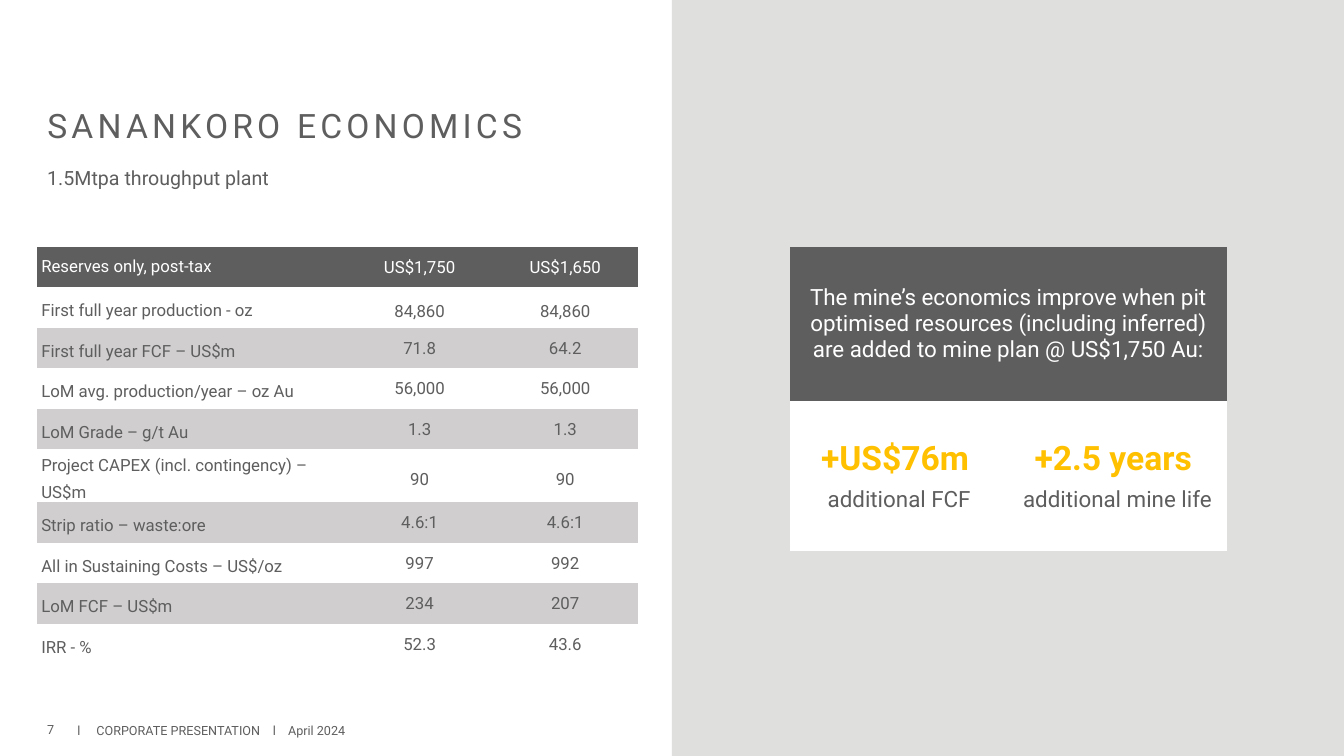
"""Builds the Sanankoro economics slide."""
from pptx import Presentation
from pptx.dml.color import RGBColor
from pptx.enum.shapes import MSO_SHAPE
from pptx.enum.text import MSO_ANCHOR, MSO_AUTO_SIZE, PP_ALIGN
from pptx.oxml.ns import qn
from pptx.util import Cm, Pt
from lxml.etree import SubElement

FONT = "Roboto"
GREY, PANEL, BAND, GOLD, WHITE = "5E5E5E", "DFDFDE", "D0CECE", "FFC000", "FFFFFF"
NO_STYLE = "{2D5ABB26-0587-4C30-8999-92F81FD0307C}"

TITLE = "SANANKORO ECONOMICS"
SUBTITLE = "1.5Mtpa throughput plant"
PAGE = "7"
FOOTER = "l\tCORPORATE PRESENTATION\tl\tApril 2024"
FOOTER_TABS = (0.48, 4.93, 5.31)
ECONOMICS = [
    ("Reserves only, post-tax", "US$1,750", "US$1,650"),
    ("First full year production - oz", "84,860", "84,860"),
    ("First full year FCF – US$m", "71.8", "64.2"),
    ("LoM avg. production/year – oz Au", "56,000", "56,000"),
    ("LoM Grade – g/t Au", "1.3", "1.3"),
    ("Project CAPEX (incl. contingency) – US$m", "90", "90"),
    ("Strip ratio – waste:ore", "4.6:1", "4.6:1"),
    ("All in Sustaining Costs – US$/oz", "997", "992"),
    ("LoM FCF – US$m", "234", "207"),
    ("IRR - %", "52.3", "43.6"),
]
SPACED_VALUE_ROWS = (1, 5)
UPSIDE = ("The mine’s economics improve when pit optimised resources "
          "(including inferred) are added to mine plan @ US$1,750 Au:")
GAINS = [("+US$76m ", "additional FCF"), ("+2.5 years ", "additional mine life")]

LEFT, TABLE_TOP = 0.94, 6.22
COL_WIDTHS, ROW_HEIGHT = (7.8, 3.67, 3.67), 1.02
UPSIDE_LEFT, UPSIDE_WIDTHS, UPSIDE_HEIGHTS = 19.91, (5.5, 5.5), (3.88, 3.78)


def rgb(value):
    return RGBColor.from_string(value)


def style(p, size, color=GREY, bold=False, align=PP_ALIGN.LEFT):
    p.alignment = align
    for r in p.runs:
        r.font.name = FONT
        r.font.size = Pt(size)
        r.font.bold = bold
        r.font.color.rgb = rgb(color)


def place(s, text, box, size):
    s.left, s.top, s.width, s.height = (Cm(v) for v in box)
    tf = s.text_frame
    tf.word_wrap = True
    tf.auto_size = MSO_AUTO_SIZE.NONE
    tf.vertical_anchor = MSO_ANCHOR.MIDDLE
    tf.text = text
    p = tf.paragraphs[0]
    style(p, size)
    return p


def add_text(slide, text, box, size):
    return place(slide.shapes.add_textbox(0, 0, 0, 0), text, box, size)


def add_grid(slide, left, widths, heights):
    size = [Cm(v) for v in (left, TABLE_TOP, sum(widths), sum(heights))]
    s = slide.shapes.add_table(len(heights), len(widths), *size)
    s.element.xpath(".//a:tableStyleId")[0].text = NO_STYLE
    table = s.table
    table.first_row = table.horz_banding = False
    for column, width in zip(table.columns, widths):
        column.width = Cm(width)
    for row, height in zip(table.rows, heights):
        row.height = Cm(height)
    return table


def fill_cell(cell, lines, fill=None):
    cell.vertical_anchor = MSO_ANCHOR.MIDDLE
    if fill:
        cell.fill.solid()
        cell.fill.fore_color.rgb = rgb(fill)
    else:
        cell.fill.background()
    cell.text_frame.text = "\n".join(lines)
    return cell.text_frame.paragraphs


def add_economics(slide):
    table = add_grid(slide, LEFT, COL_WIDTHS, [ROW_HEIGHT] * len(ECONOMICS))
    for i, row in enumerate(ECONOMICS):
        fill = GREY if i == 0 else BAND if i % 2 == 0 else None
        for j, text in enumerate(row):
            cell = table.cell(i, j)
            p = fill_cell(cell, [text], fill)[0]
            cell.margin_left = Cm(0.02 if j else 0.1)
            cell.margin_right = Cm(0.02)
            cell.margin_top = Cm(0.02 if j else 0)
            cell.margin_bottom = 0
            style(p, 12, GREY if i else WHITE,
                  align=PP_ALIGN.CENTER if j else PP_ALIGN.LEFT)
            if i in SPACED_VALUE_ROWS or (i and not j):
                p.line_spacing = Pt(19)


def add_upside(slide):
    table = add_grid(slide, UPSIDE_LEFT, UPSIDE_WIDTHS, UPSIDE_HEIGHTS)
    heading = table.cell(0, 0)
    heading.merge(table.cell(0, 1))
    p = fill_cell(heading, [UPSIDE], GREY)[0]
    style(p, 16, WHITE, align=PP_ALIGN.CENTER)
    for j, gain in enumerate(GAINS):
        figure, label = fill_cell(table.cell(1, j), gain, WHITE)
        style(figure, 24, GOLD, True, PP_ALIGN.CENTER)
        style(label, 16, align=PP_ALIGN.CENTER)
        label.space_before = Pt(6)


def main():
    prs = Presentation()
    prs.slide_width, prs.slide_height = Cm(33.87), Cm(19.05)
    slide = prs.slides.add_slide(prs.slide_layouts[5])

    half = prs.slide_width // 2
    panel = slide.shapes.add_shape(MSO_SHAPE.RECTANGLE, half, 0, half, prs.slide_height)
    panel.shadow.inherit = False
    panel.fill.solid()
    panel.fill.fore_color.rgb = rgb(PANEL)
    panel.line.fill.background()

    p = place(slide.shapes.title, TITLE, (LEFT, 2.34, 15.7, 1.75), 24)
    p.line_spacing = 0.9
    p.runs[0].font._element.set("spc", "300")

    p = add_text(slide, SUBTITLE, (LEFT, 3.89, 15.7, 1.27), 14)
    p.line_spacing = 0.9

    add_text(slide, PAGE, (LEFT, 17.86, 1.88, 1.02), 9)
    p = add_text(slide, FOOTER, (1.7, 17.91, 11.43, 1.02), 9)
    tabs = SubElement(p._p.get_or_add_pPr(), qn("a:tabLst"))
    for stop in FOOTER_TABS:
        SubElement(tabs, qn("a:tab"), pos=str(Cm(stop)), algn="l")

    add_economics(slide)
    add_upside(slide)
    prs.save("out.pptx")


if __name__ == "__main__":
    main()
